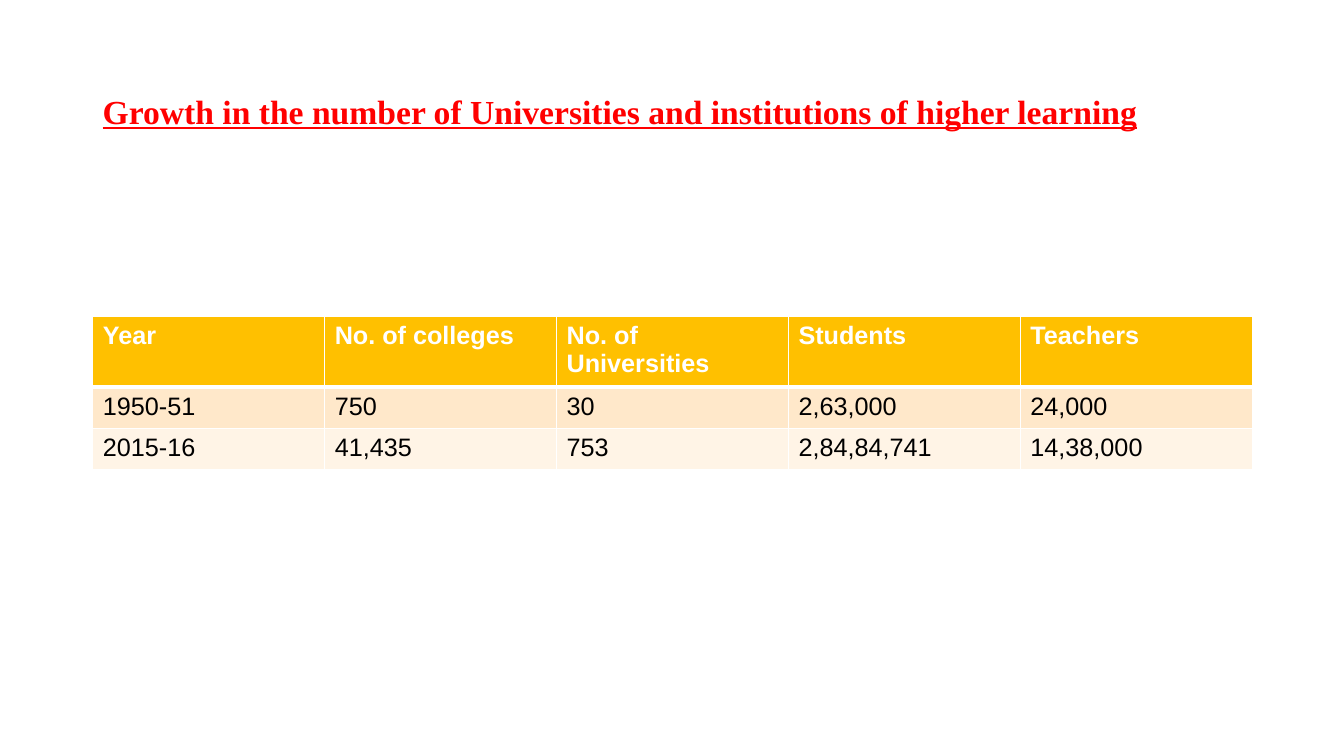
from dataclasses import dataclass

from lxml.etree import SubElement
from pptx import Presentation
from pptx.dml.color import RGBColor as RGB
from pptx.enum.text import MSO_ANCHOR as Anchor
from pptx.oxml.ns import qn
from pptx.util import Inches, Pt

MARGIN, CONTENT_WIDTH = 0.92, 11.5
HEADING = "Growth in the number of Universities and institutions of higher learning"
GROWTH = [
    ("Year", "No. of colleges", "No. of Universities", "Students", "Teachers"),
    ("1950-51", "750", "30", "2,63,000", "24,000"),
    ("2015-16", "41,435", "753", "2,84,84,741", "14,38,000"),
]


@dataclass(frozen=True)
class Theme:
    title_font: str = "Times New Roman"
    body_font: str = "Arial"
    title_size: int = 24
    body_size: int = 18
    title_color: str = "FF0000"
    header_text: str = "FFFFFF"
    body_text: str = "000000"
    header_fill: str = "FFC000"
    bands: tuple = ("FFE8CA", "FFF4E6")
    border: str = "FFFFFF"
    thin: int = 1
    thick: int = 3


class SlideBuilder:
    def __init__(self, slide, theme):
        self.slide = slide
        self.theme = theme

    def style(self, paragraph, font, size, color, bold=False, underline=None):
        for run in paragraph.runs:
            run.font.name = font
            run.font.size = Pt(size)
            run.font.color.rgb = RGB.from_string(color)
            run.font.bold = bold
            run.font.underline = underline

    def title(self, text, left, top, width, height):
        theme = self.theme
        box = self.slide.shapes.add_textbox(
            Inches(left), Inches(top), Inches(width), Inches(height))
        frame = box.text_frame
        frame.word_wrap = True
        frame.vertical_anchor = Anchor.MIDDLE
        frame.text = text
        heading = frame.paragraphs[0]
        heading.line_spacing = 0.9
        self.style(heading, theme.title_font, theme.title_size,
                   theme.title_color, bold=True, underline=True)

    def borders(self, cell, top, bottom):
        """Draw the four cell edges; top and bottom are widths in points."""
        thin = self.theme.thin
        properties = cell._tc.get_or_add_tcPr()
        for edge, width in zip("LRTB", (thin, thin, top, bottom)):
            line = SubElement(properties, qn(f"a:ln{edge}"), w=str(Pt(width)))
            fill = SubElement(line, qn("a:solidFill"))
            SubElement(fill, qn("a:srgbClr"), val=self.theme.border)

    def table(self, rows, left, top, width, row_height):
        """Build a table with a header row and alternating body bands."""
        theme = self.theme
        columns = len(rows[0])
        table = self.slide.shapes.add_table(
            len(rows), columns, Inches(left), Inches(top),
            Inches(width), Inches(row_height * len(rows))).table
        for column in table.columns:
            column.width = Inches(width / columns)
        for index, values in enumerate(rows):
            header = index == 0
            band = theme.bands[(index - 1) % len(theme.bands)]
            for column, value in enumerate(values):
                cell = table.cell(index, column)
                self.borders(cell,
                             top=theme.thick if index == 1 else theme.thin,
                             bottom=theme.thick if header else theme.thin)
                cell.fill.solid()
                cell.fill.fore_color.rgb = RGB.from_string(
                    theme.header_fill if header else band)
                cell.text_frame.text = value
                self.style(cell.text_frame.paragraphs[0],
                           theme.body_font, theme.body_size,
                           theme.header_text if header else theme.body_text,
                           bold=header)


def main():
    deck = Presentation()
    deck.slide_width, deck.slide_height = Inches(13.33), Inches(7.5)
    slide = deck.slides.add_slide(deck.slide_layouts[6])
    builder = SlideBuilder(slide, Theme())
    builder.title(HEADING, MARGIN, 0.4, CONTENT_WIDTH, 1.45)
    builder.table(GROWTH, MARGIN, 3.14, CONTENT_WIDTH, 0.41)
    deck.save("out.pptx")


if __name__ == "__main__":
    main()
